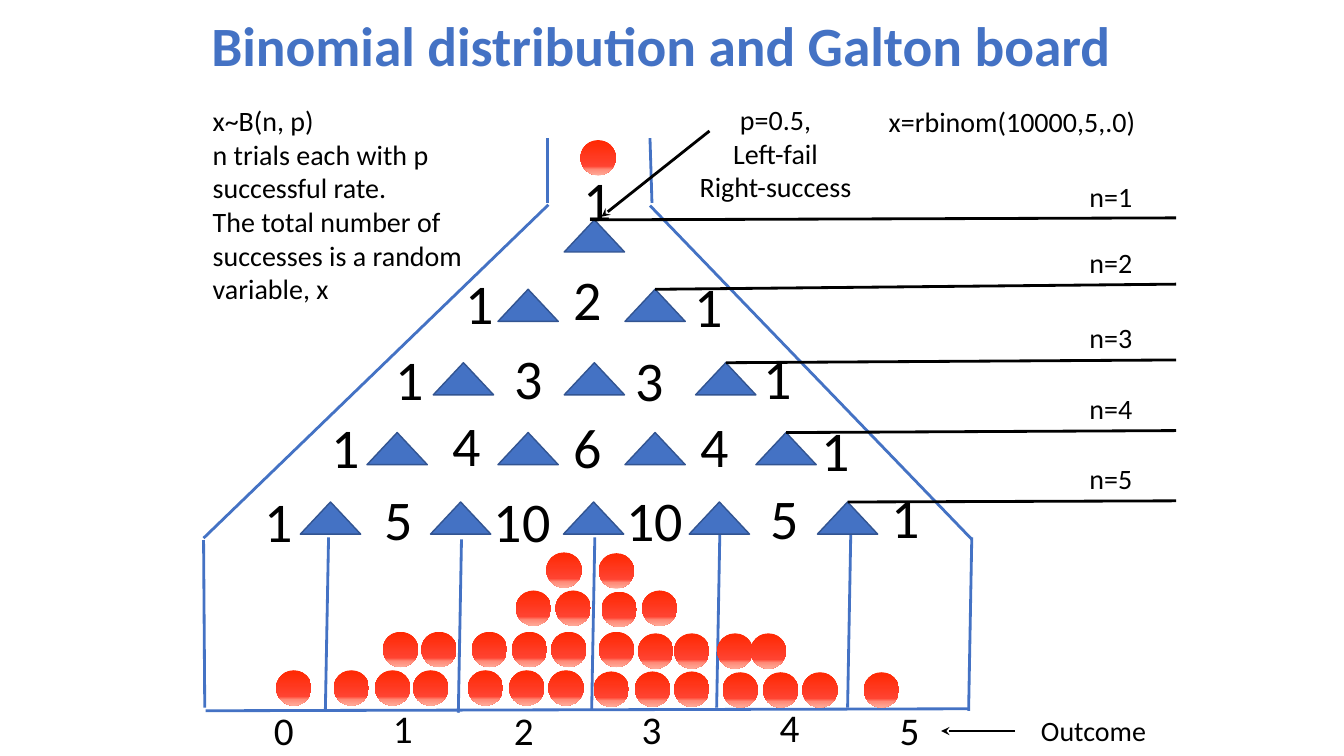
from copy import deepcopy
from dataclasses import dataclass
from math import comb

from lxml.etree import SubElement
from pptx import Presentation
from pptx.dml.color import RGBColor
from pptx.enum.shapes import MSO_CONNECTOR, MSO_SHAPE
from pptx.enum.text import MSO_ANCHOR, MSO_AUTO_SIZE, PP_ALIGN
from pptx.oxml.ns import qn
from pptx.util import Cm, Pt

COLORS = {"blue": "4472C4", "peg_edge": "325491", "black": "000000"}
BALL_STOPS = [(0, "FF2802"), (0.74, "FF4331"), (0.83, "FF8976"), (1, "FFAA99")]
FONT = "Calibri"
PEG_WIDTH, PEG_HEIGHT = 1.52, 0.81
BALL_SIZE = 0.89
DIGIT_WIDTH = 2.2
DIVIDER_LEAN, DIVIDER_HEIGHT = -0.08, 4.37


@dataclass
class Label:
    text: str
    left: float
    top: float
    width: float
    height: float
    size: float = 20
    align: PP_ALIGN = PP_ALIGN.CENTER


@dataclass
class Segment:
    x1: float
    y1: float
    x2: float
    y2: float
    color: str = "blue"
    arrow: bool = False


@dataclass
class PegRow:
    """A level: peg left edges, (centre, top) of each path count, and its marker line."""
    top: float
    pegs: list[float]
    counts: list[tuple[float, float]]
    line_top: float
    label_top: float


@dataclass
class BallRow:
    top: float
    lefts: list[float]


PEG_ROWS = [
    PegRow(5.54, [14.22], [(15.07, 4.04)], 5.49, 4.39),
    PegRow(7.29, [12.55, 15.75], [(12.1, 6.63), (14.8, 6.55), (17.87, 6.71)], 7.16, 6.05),
    PegRow(9.14, [10.92, 14.22, 17.53],
           [(10.33, 8.56), (13.32, 8.53), (16.37, 8.59), (19.6, 8.53)], 9.07, 7.95),
    PegRow(10.9, [9.25, 12.55, 15.75, 19.05],
           [(8.72, 10.26), (11.75, 10.21), (14.8, 10.26), (18.02, 10.24), (21.07, 10.34)],
           10.85, 9.75),
    PegRow(12.65, [7.57, 10.85, 14.2, 17.37, 20.6],
           [(7.02, 12.14), (10.05, 12.09), (13.16, 12.14), (16.5, 12.12), (19.77, 12.07),
            (22.82, 12.04)], 12.62, 11.51),
]

WALLS = [
    Segment(13.79, 3.48, 13.79, 5.11),
    Segment(16.38, 3.48, 16.43, 5.11),
    Segment(13.82, 5.16, 5.13, 13.56),
    Segment(24.41, 17.86, 5.18, 17.91),
    Segment(16.38, 5.18, 24.49, 13.59),
    Segment(5.13, 13.61, 5.16, 17.83),
    Segment(24.49, 13.54, 24.41, 17.91),
]
DIVIDER_TOPS = [(8.28, 13.54), (11.63, 13.59), (14.99, 13.54), (18.14, 13.46), (21.44, 13.46)]

BALL_ROWS = [
    BallRow(3.53, [14.63]),
    BallRow(16.89, [6.96, 8.41, 9.45, 10.41, 11.79, 12.83, 13.82]),
    BallRow(16.92, [14.96, 16, 16.99]),
    BallRow(16.94, [18.21, 19.23, 20.22, 21.77]),
    BallRow(15.92, [9.65, 10.62, 11.89, 12.9, 13.89, 15.09]),
    BallRow(15.96, [16.08, 16.99, 18.92, 18.08]),
    BallRow(14.88, [13, 14, 16.18]),
    BallRow(14.91, [15.16]),
    BallRow(13.92, [13.77]),
    BallRow(13.94, [15.09]),
]

OUTCOMES = [(6.35, 17.68), (9.35, 17.63), (12.4, 17.68), (15.62, 17.65), (19.1, 17.6),
            (22.12, 17.68)]

NOTES = [
    Label("x~B(n, p)\nn trials each with p successful rate.\n"
          "The total number of successes is a random variable, x",
          5.11, 2.49, 7.34, 5.38, align=PP_ALIGN.LEFT),
    Label("p=0.5,\nLeft-fail\nRight-success", 17.07, 2.46, 4.95, 2.82),
    Label("x=rbinom(10000,5,.0)", 21.44, 2.51, 8.13, 1.12),
    Label("Outcome", 25.58, 17.86, 3.96, 1.12),
]
ARROWS = [
    Segment(17.88, 3.3, 15.16, 5.46, "black", True),
    Segment(25.58, 18.42, 23.72, 18.42, "black", True),
]


def rgb(name: str) -> RGBColor:
    return RGBColor.from_string(COLORS[name])


def add_title(slide, text: str) -> None:
    title = slide.shapes.title
    title.left, title.top, title.width, title.height = Cm(4.88), Cm(0), Cm(23.57), Cm(2.44)
    title.text_frame.text = text
    title.text_frame.vertical_anchor = MSO_ANCHOR.MIDDLE
    paragraph = title.text_frame.paragraphs[0]
    paragraph.alignment = PP_ALIGN.CENTER
    paragraph.line_spacing = 0.9
    font = paragraph.runs[0].font
    font.name, font.size, font.bold = FONT, Pt(39.6), True
    font.color.rgb = rgb("blue")


def add_label(slide, label: Label) -> None:
    box = slide.shapes.add_textbox(Cm(label.left), Cm(label.top), Cm(label.width), Cm(label.height))
    frame = box.text_frame
    frame.word_wrap = True
    frame.auto_size = MSO_AUTO_SIZE.SHAPE_TO_FIT_TEXT
    frame.text = label.text
    for paragraph in frame.paragraphs:
        paragraph.alignment = label.align
        font = paragraph.runs[0].font
        font.name, font.size = FONT, Pt(label.size)
        font.color.rgb = rgb("black")


def add_segment(slide, segment: Segment):
    connector = slide.shapes.add_connector(
        MSO_CONNECTOR.STRAIGHT, Cm(segment.x1), Cm(segment.y1), Cm(segment.x2), Cm(segment.y2))
    connector.line.color.rgb = rgb(segment.color)
    connector.line.width = Pt(2)
    if segment.arrow:
        SubElement(connector.line._get_or_add_ln(), qn("a:tailEnd"), type="stealth")
    SubElement(connector._element.spPr, qn("a:effectLst"))
    return connector


def add_peg(slide, left: float, top: float):
    peg = slide.shapes.add_shape(
        MSO_SHAPE.ISOSCELES_TRIANGLE, Cm(left), Cm(top), Cm(PEG_WIDTH), Cm(PEG_HEIGHT))
    peg.shadow.inherit = False
    peg.fill.solid()
    peg.fill.fore_color.rgb = rgb("blue")
    peg.line.color.rgb = rgb("peg_edge")
    peg.line.width = Pt(1)
    return peg


def add_ball(slide, left: float, top: float) -> None:
    ball = slide.shapes.add_shape(
        MSO_SHAPE.OVAL, Cm(left), Cm(top), Cm(BALL_SIZE), Cm(BALL_SIZE))
    ball.shadow.inherit = False
    ball.line.fill.background()
    ball.fill.gradient()
    ball.fill.gradient_angle = 270
    stop_list = ball._element.spPr.find(".//" + qn("a:gsLst"))
    while len(stop_list) < len(BALL_STOPS):
        stop_list.append(deepcopy(stop_list[0]))
    for stop, (position, color) in zip(ball.fill.gradient_stops, BALL_STOPS):
        stop.position = position
        stop.color.rgb = RGBColor.from_string(color)


def main() -> None:
    presentation = Presentation()
    presentation.slide_width, presentation.slide_height = Cm(33.87), Cm(19.05)
    slide = presentation.slides.add_slide(presentation.slide_layouts[5])
    add_title(slide, "Binomial distribution and Galton board")

    for wall in WALLS:
        add_segment(slide, wall)
    for x, y in DIVIDER_TOPS:
        add_segment(slide, Segment(x, y, x + DIVIDER_LEAN, y + DIVIDER_HEIGHT))
    for ball_row in BALL_ROWS:
        for left in ball_row.lefts:
            add_ball(slide, left, ball_row.top)

    for n, row in enumerate(PEG_ROWS, start=1):
        pegs = [add_peg(slide, left, row.top) for left in row.pegs]
        for k, (center, top) in enumerate(row.counts):
            add_label(slide, Label(str(comb(n, k)), center - DIGIT_WIDTH / 2, top,
                                   DIGIT_WIDTH, 1.96, 40))
        marker = add_segment(slide, Segment(29.64, row.line_top, row.pegs[-1], row.top, "black"))
        marker.end_connect(pegs[-1], 0)
        add_label(slide, Label(f"n={n}", 26.75, row.label_top, 2.49, 1.12))

    for outcome, (left, top) in enumerate(OUTCOMES):
        add_label(slide, Label(str(outcome), left, top, 1.6, 1.45, 28))
    for note in NOTES:
        add_label(slide, note)
    for arrow in ARROWS:
        add_segment(slide, arrow)
    presentation.save("out.pptx")


if __name__ == "__main__":
    main()
